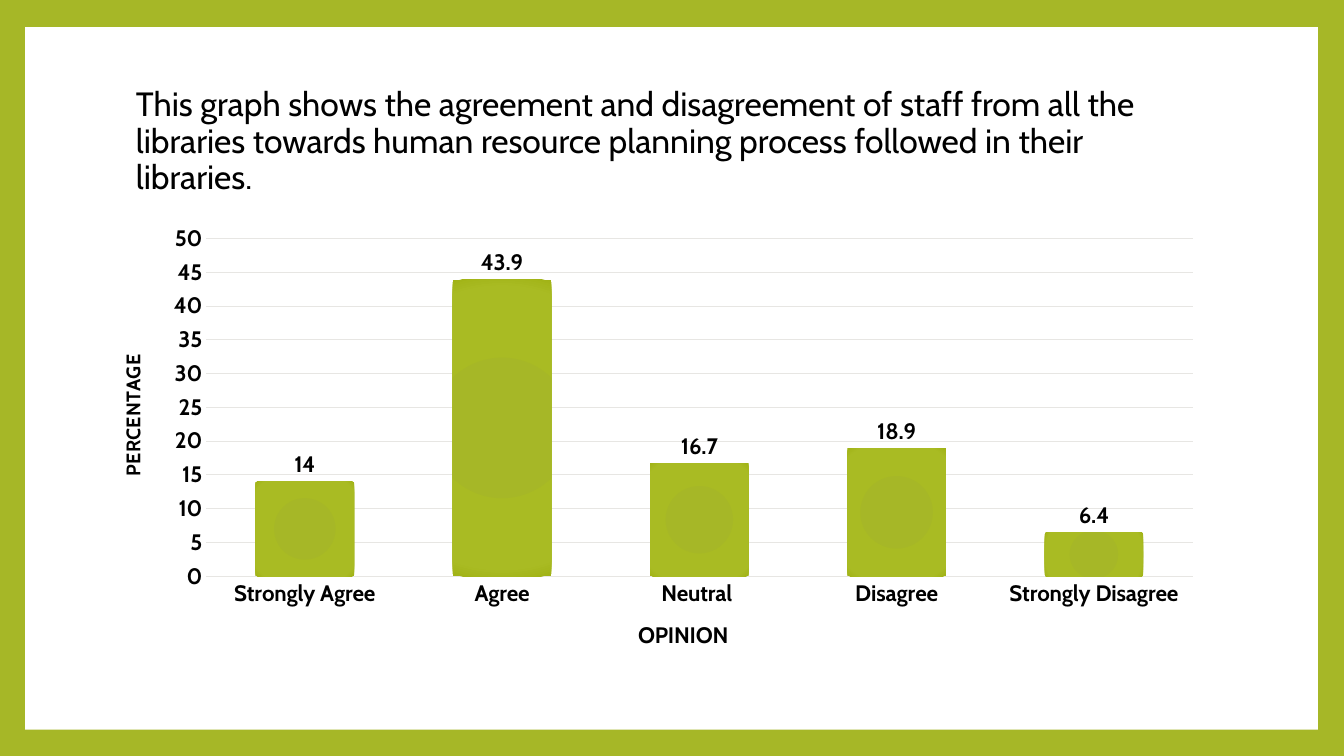
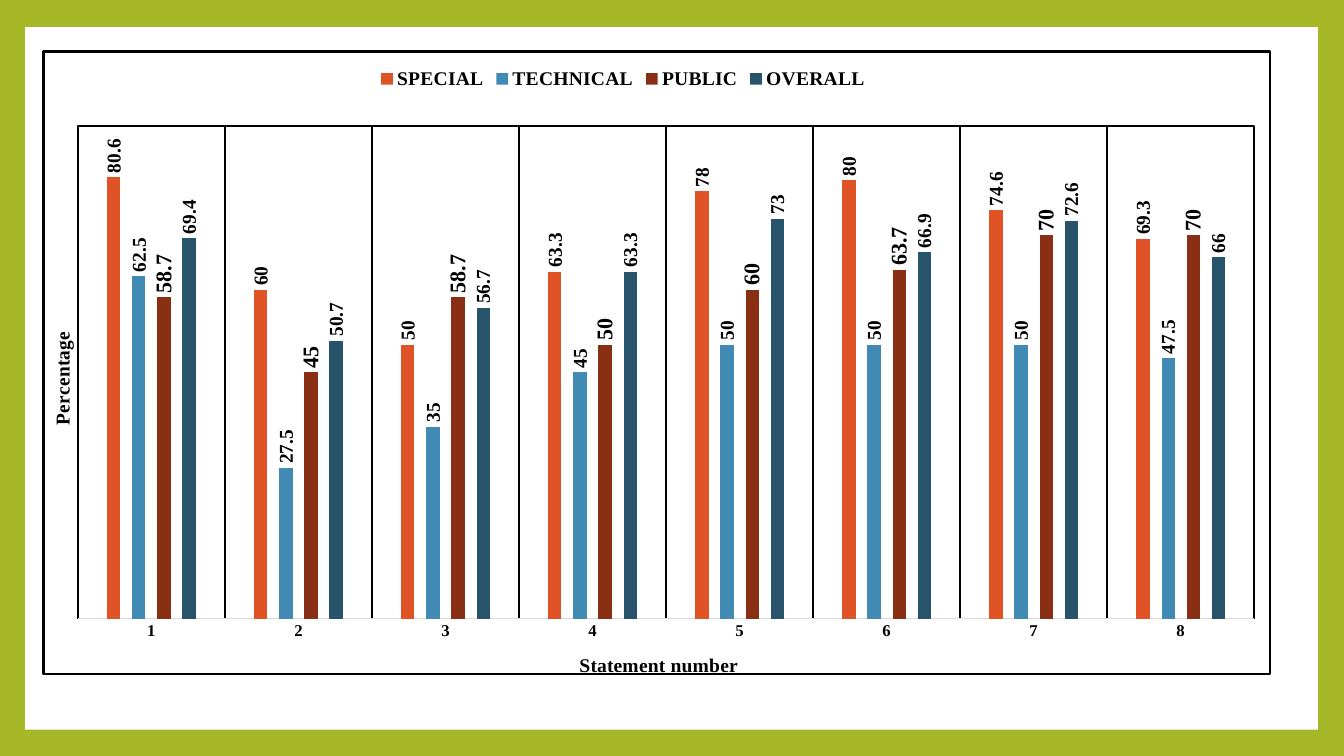
from lxml import etree
from pptx import Presentation
from pptx.chart.data import CategoryChartData
from pptx.dml.color import RGBColor
from pptx.enum.chart import XL_CHART_TYPE, XL_LABEL_POSITION, XL_LEGEND_POSITION, XL_TICK_MARK
from pptx.enum.shapes import MSO_SHAPE
from pptx.enum.text import MSO_ANCHOR
from pptx.oxml import parse_xml
from pptx.oxml.ns import nsdecls, qn
from pptx.util import Inches, Pt

COLUMNS = XL_CHART_TYPE.COLUMN_CLUSTERED
OUTSIDE_END = XL_LABEL_POSITION.OUTSIDE_END
LEGEND_TOP = XL_LEGEND_POSITION.TOP
NO_TICK = XL_TICK_MARK.NONE
RECTANGLE = MSO_SHAPE.RECTANGLE
MIDDLE = MSO_ANCHOR.MIDDLE

GREEN, WHITE, BLACK, PALE = "A6B727", "FFFFFF", "000000", "E7E6E3"
SANS, SERIF = "Cabin", "Times New Roman"
BAR_STOPS = [(0, GREEN), (90, "A9BB23"), (100, "A1B316")]


def rgb(value):
    return RGBColor.from_string(value)


def place(part, index, **percents):
    """Give a chart part a manual layout, in percent of the chart's size."""
    for old in part.findall(qn("c:layout")):
        part.remove(old)
    layout = etree.Element(qn("c:layout"))
    manual = etree.SubElement(layout, qn("c:manualLayout"))
    settings = {"xMode": "edge", "yMode": "edge"}
    if "w" in percents:
        settings = {"layoutTarget": "inner", **settings}
    for tag, percent in percents.items():
        settings[tag] = round(percent / 100, 4)
    for tag, value in settings.items():
        etree.SubElement(manual, qn("c:" + tag)).set("val", str(value))
    part.insert(index, layout)


prs = Presentation()
prs.slide_width, prs.slide_height = Inches(13.33), Inches(7.5)
blank = prs.slide_layouts[6]
opinion_slide = prs.slides.add_slide(blank)
statement_slide = prs.slides.add_slide(blank)

# Shared look: green master background with a white panel
master = prs.slide_master
master.background.fill.solid()
master.background.fill.fore_color.rgb = rgb(GREEN)
panel = opinion_slide.shapes.add_shape(
    RECTANGLE, Inches(0.25), Inches(0.27), Inches(12.82), Inches(6.97))
panel.shadow.inherit = False
panel.fill.solid()
panel.fill.fore_color.rgb = rgb(WHITE)
panel.line.fill.background()
master.shapes._spTree.insert(2, panel._element)

# Heading
heading = opinion_slide.shapes.add_textbox(
    Inches(1.25), Inches(0.67), Inches(10.8), Inches(1.48)).text_frame
heading.word_wrap = True
heading.vertical_anchor = MIDDLE
sentence = heading.paragraphs[0]
sentence.line_spacing = 0.9
sentence.text = ("This graph shows the agreement and disagreement of staff from all the "
                 "libraries towards human resource planning process followed in their libraries.")
sentence.font.size = Pt(24)
sentence.font.name = SANS
sentence.font.color.rgb = rgb(BLACK)

# Charts; each series is (name, values, colour, label size),
# each axis title is (wording, size, x percent, y percent)
CHARTS = [
    dict(slide=opinion_slide, box=(0.97, 2.15, 11.08, 4.52), font=SANS,
         categories=["Strongly Agree", "Agree", "Neutral ", "Disagree", "Strongly Disagree"],
         series=[("Series 1", [14, 43.9, 16.7, 18.9, 6.4], GREEN, 16)],
         gap=100, overlap=-24, top=50, step=5, axis_size=16, axis_line=PALE,
         plot=dict(x=9.7, y=4.8, w=88.3, h=74.1),
         titles=[("OPINION", 16, 48, 87.6), ("PERCENTAGE", 14, 1.6, 29.5)]),
    dict(slide=statement_slide, box=(0.42, 0.5, 12.19, 6.27), font=SERIF,
         categories=[str(number) for number in range(1, 9)],
         series=[("SPECIAL", [80.6, 60, 50, 63.3, 78, 80, 74.6, 69.3], "DF5327", 14),
                 ("TECHNICAL", [62.5, 27.5, 35, 45, 50, 50, 50, 47.5], "418AB3", 14),
                 ("PUBLIC", [58.7, 45, 58.7, 50, 60, 63.7, 70, 70], "893014", 16),
                 ("OVERALL", [69.4, 50.7, 56.7, 63.3, 73, 66.9, 72.6, 66], "27536B", 14)],
         gap=444, overlap=-90, top=90, step=10, axis_size=12, axis_line="D9D9D9",
         plot=dict(x=2.8, y=11.9, w=95.9, h=79.2),
         titles=[("Statement number ", 14, 43.4, 96), ("Percentage", 14, 0.2, 44.6)]),
]

built = []
for item in CHARTS:
    data = CategoryChartData()
    data.categories = item["categories"]
    for name, values, _, _ in item["series"]:
        data.add_series(name, values)
    box = [Inches(length) for length in item["box"]]
    chart = item["slide"].shapes.add_chart(COLUMNS, *box, data).chart
    built.append(chart)
    chart.has_title = False
    chart.has_legend = False
    chart.font.size = Pt(10)
    chart.font.name = SANS
    chart.font.color.rgb = rgb(BLACK)
    fonts = []

    bars = chart.plots[0]
    bars.vary_by_categories = False
    bars.gap_width, bars.overlap = item["gap"], item["overlap"]
    for series, (_, _, colour, size) in zip(bars.series, item["series"]):
        series.format.fill.solid()
        series.format.fill.fore_color.rgb = rgb(colour)
        series.invert_if_negative = False
        labels = series.data_labels
        labels.show_value = True
        labels.position = OUTSIDE_END
        fonts.append((labels.font, size))

    categories, percentages = chart.category_axis, chart.value_axis
    percentages.minimum_scale, percentages.maximum_scale = 0, item["top"]
    percentages.major_unit = item["step"]
    percentages.format.line.fill.background()
    categories.format.line.color.rgb = rgb(item["axis_line"])
    categories.format.line.width = Pt(0.75)
    for axis, (wording, size, x, y) in zip((categories, percentages), item["titles"]):
        axis.major_tick_mark = axis.minor_tick_mark = NO_TICK
        fonts.append((axis.tick_labels.font, item["axis_size"]))
        caption = axis.axis_title
        caption.text_frame.text = wording
        fonts.append((caption.text_frame.paragraphs[0].runs[0].font, size))
        place(caption._element, 1, x=x, y=y)
    turn = percentages.axis_title.text_frame._txBody.find(qn("a:bodyPr"))
    turn.set("rot", "-5400000")
    turn.set("vert", "horz")
    place(chart._chartSpace.chart.plotArea, 0, **item["plot"])

    for font, size in fonts:
        font.size, font.bold, font.name = Pt(size), True, item["font"]
        font.color.rgb = rgb(BLACK)

opinions, statements = built

# Opinion chart: pale grid and bars with a radial gradient
grid = opinions.value_axis.major_gridlines.format.line
grid.color.rgb = rgb(PALE)
grid.width = Pt(0.75)
stops = "".join(f'<a:gs pos="{at * 1000}"><a:srgbClr val="{colour}"/></a:gs>'
                for at, colour in BAR_STOPS)
gradient = parse_xml(
    f'<a:gradFill {nsdecls("a")}><a:gsLst>{stops}</a:gsLst><a:path path="circle">'
    '<a:fillToRect l="100000" t="100000" r="100000" b="100000"/></a:path></a:gradFill>')
bar_format = opinions.plots[0].series[0]._element.find(qn("c:spPr"))
bar_format.replace(bar_format.find(qn("a:solidFill")), gradient)

# Statement chart: legend, separators, upright labels and frames
statements.has_legend = True
legend = statements.legend
legend.position = LEGEND_TOP
legend.include_in_layout = False
legend.font.size, legend.font.bold, legend.font.name = Pt(14), True, SERIF
legend.font.color.rgb = rgb(BLACK)
place(legend._element, 1, x=27, y=2)
statements.value_axis.has_major_gridlines = False
statements.value_axis.visible = False
separators = statements.category_axis.major_gridlines.format.line
separators.color.rgb = rgb(BLACK)
separators.width = Pt(1)
for series in statements.plots[0].series:
    upright = series.data_labels._element.find(qn("c:txPr")).find(qn("a:bodyPr"))
    upright.set("rot", "-5400000")
    upright.set("vert", "horz")
chart_part = statements._chartSpace.chart
for before, width in ((chart_part.plotArea[-1], 1.25), (chart_part, 1.75)):
    before.addnext(parse_xml(
        f'<c:spPr {nsdecls("c", "a")}><a:solidFill><a:srgbClr val="{WHITE}"/></a:solidFill>'
        f'<a:ln w="{Pt(width)}"><a:solidFill><a:srgbClr val="{BLACK}"/></a:solidFill></a:ln>'
        '</c:spPr>'))

prs.save("out.pptx")
